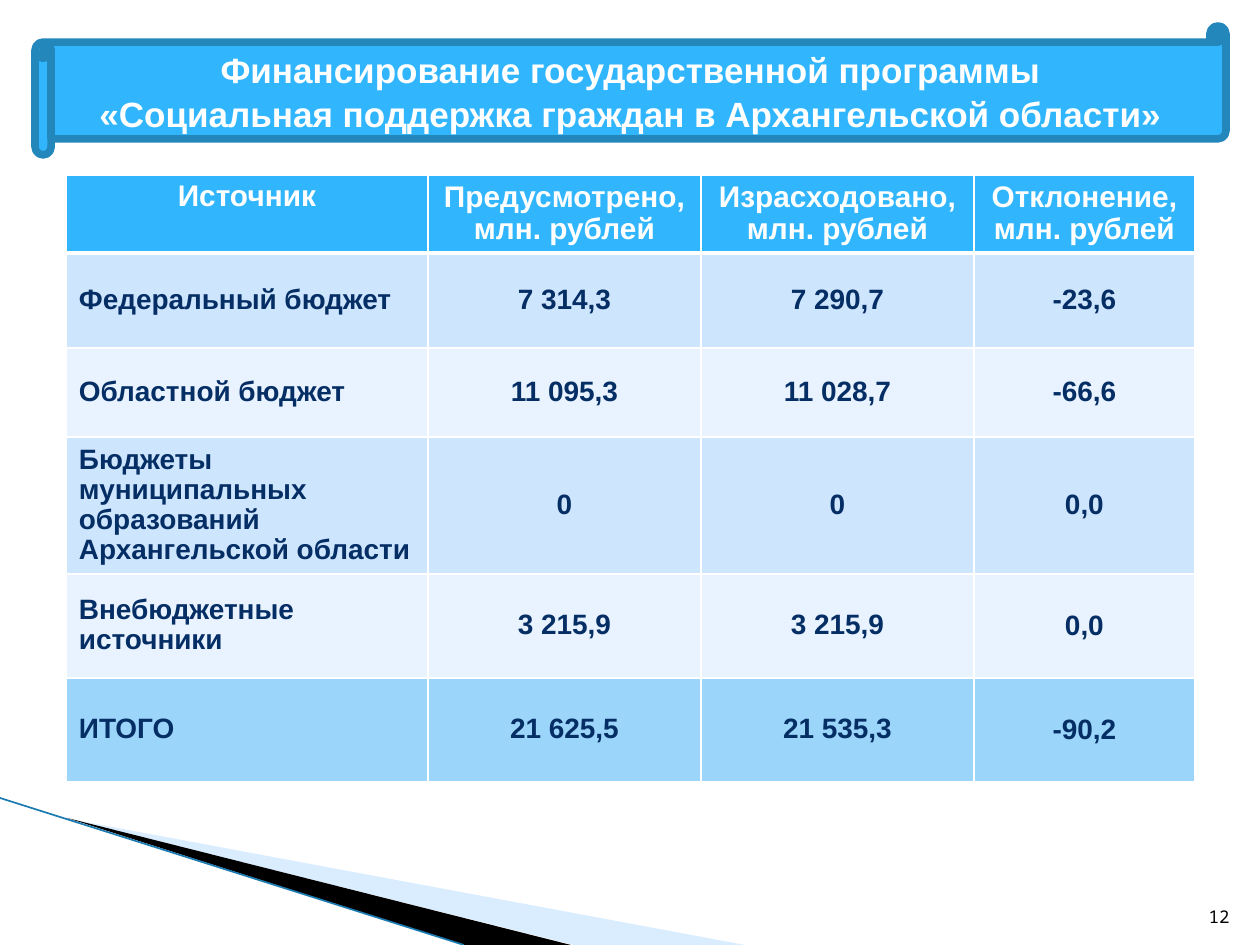
from lxml import etree
from pptx import Presentation
from pptx.dml.color import RGBColor
from pptx.enum.shapes import MSO_CONNECTOR, MSO_SHAPE
from pptx.enum.text import MSO_ANCHOR, MSO_AUTO_SIZE, PP_ALIGN
from pptx.oxml.ns import qn
from pptx.util import Emu, Pt

LEFT, MID, RIGHT = PP_ALIGN.LEFT, PP_ALIGN.CENTER, PP_ALIGN.RIGHT
TOP, CENTER, BOTTOM = MSO_ANCHOR.TOP, MSO_ANCHOR.MIDDLE, MSO_ANCHOR.BOTTOM
SCROLL, STRAIGHT = MSO_SHAPE.HORIZONTAL_SCROLL, MSO_CONNECTOR.STRAIGHT
FIXED = MSO_AUTO_SIZE.NONE

SCALE = 914400 / 126  # EMU in one px
COLORS = {
    "blue": "31B6FD", "edge": "2487BB", "white": "FFFFFF", "navy": "052E65",
    "odd": "CEE5FE", "even": "E8F3FF", "total": "9BD5FA",
    "pale": "A3D3FF", "black": "000000", "stripe": "1B7AB0",
}

# Text formats
TITLE = {"size": Pt(20), "name": "Arial", "bold": True}
HEAD = {"size": Pt(17), "name": "Arial", "bold": True}
BODY = {"size": Pt(16), "name": "Arial", "bold": True}
NUMBER = {"size": Pt(10), "name": "Noto Sans Mono", "bold": False}

# Cell margins in px: left, top, right, bottom
WIDE, SLIM, TIGHT = (13, 6, 13, 6), (9, 0, 9, 0), (1, 1, 1, 0)

HEADING = [
    "Финансирование государственной программы",
    "«Социальная поддержка граждан в Архангельской области»",
]
COLS = [362, 273, 273, 221]
ROWS = [78, 95, 89, 137, 104, 104]
DATA = [
    ["Источник", "Предусмотрено, млн. рублей",
     "Израсходовано, млн. рублей", "Отклонение, млн. рублей"],
    ["Федеральный бюджет", "7 314,3", "7 290,7", "-23,6"],
    ["Областной бюджет", "11 095,3", "11 028,7", "-66,6"],
    ["Бюджеты муниципальных образований Архангельской области",
     "0", "0", "0,0"],
    ["Внебюджетные источники", "3 215,9", "3 215,9", "0,0"],
    ["ИТОГО", "21 625,5", "21 535,3", "-90,2"],
]
FILLS = ["blue", "odd", "even", "odd", "even", "total"]


def px(n):
    return Emu(round(n * SCALE))


def rgb(key):
    return RGBColor.from_string(COLORS[key])


def paint(item, key):
    item.fill.solid()
    item.fill.fore_color.rgb = rgb(key)


def pad(item, sides):
    names = ("margin_left", "margin_top", "margin_right", "margin_bottom")
    for name, side in zip(names, sides):
        setattr(item, name, px(side))


def write(frame, lines, style, key, align):
    frame.word_wrap = True
    for i, line in enumerate(lines):
        par = frame.add_paragraph() if i else frame.paragraphs[0]
        par.alignment = align
        run = par.add_run()
        run.text = line
        for name, value in style.items():
            setattr(run.font, name, value)
        run.font.color.rgb = rgb(key)


def add_wedge(slide, points, key, alpha=None):
    pen = slide.shapes.build_freeform(*points[0], scale=SCALE)
    pen.add_line_segments(points[1:], close=True)
    wedge = pen.convert_to_shape()
    wedge.shadow.inherit = False
    paint(wedge, key)
    wedge.line.fill.background()
    if alpha:
        tint = wedge._element.spPr.find(".//" + qn("a:srgbClr"))
        etree.SubElement(tint, qn("a:alpha"), val=str(alpha * 1000))


def add_stripe(slide, x1, y1, x2, y2):
    line = slide.shapes.add_connector(STRAIGHT, px(x1), px(y1), px(x2), px(y2))
    line.line.color.rgb = rgb("stripe")
    line.line.width = Pt(0.95)
    etree.SubElement(line._element.spPr, qn("a:effectLst"))


def add_title(slide, x, y, w, h):
    box = [px(n) for n in (x, y, w, h)]
    scroll = slide.shapes.add_shape(SCROLL, *box)
    scroll.shadow.inherit = False
    paint(scroll, "blue")
    scroll.line.color.rgb = rgb("edge")
    scroll.line.width = Pt(4.33)

    # The title lies on top of the scroll
    title = slide.shapes.title
    title.left, title.top, title.width, title.height = box
    frame = title.text_frame
    frame.auto_size = FIXED
    frame.vertical_anchor = CENTER
    pad(frame, (0, 0, 0, 0))
    write(frame, HEADING, TITLE, "white", MID)
    for par in frame.paragraphs:
        par.line_spacing = 1.04
    slide.shapes._spTree.append(title._element)


def add_border(cell, side, width):
    props = cell._tc.get_or_add_tcPr()
    edge = etree.SubElement(props, qn("a:" + side), w=str(Pt(width)))
    fill = etree.SubElement(edge, qn("a:solidFill"))
    etree.SubElement(fill, qn("a:srgbClr"), val=COLORS["white"])


def fill_cell(cell, text, row, col):
    head, first = row == 0, col == 0
    for side in ("lnL", "lnR", "lnT", "lnB"):
        thick = (head and side == "lnB") or (row == 1 and side == "lnT")
        add_border(cell, side, 3 if thick else 1)
    paint(cell, FILLS[row])
    cell.vertical_anchor = TOP if head and first else CENTER
    pad(cell, WIDE if head or first else TIGHT if col == 3 else SLIM)
    align = LEFT if first and not head else MID
    write(cell.text_frame, [text], HEAD if head else BODY,
          "white" if head else "navy", align)
    cell.text_frame.paragraphs[0].line_spacing = 0.96


def add_grid(slide, x, y):
    table = slide.shapes.add_table(
        len(ROWS), len(COLS), px(x), px(y), px(sum(COLS)), px(sum(ROWS))).table
    for col, width in zip(table.columns, COLS):
        col.width = px(width)
    for row, height in zip(table.rows, ROWS):
        row.height = px(height)
    for r, texts in enumerate(DATA):
        for c, text in enumerate(texts):
            fill_cell(table.cell(r, c), text, r, c)


def add_number(slide, text, x, y, w, h):
    box = slide.shapes.add_textbox(px(x), px(y), px(w), px(h))
    box.text_frame.vertical_anchor = BOTTOM
    write(box.text_frame, [text], NUMBER, "black", RIGHT)


def main():
    deck = Presentation()
    deck.slide_width, deck.slide_height = px(1260), px(945)
    slide = deck.slides.add_slide(deck.slide_layouts[5])

    # Corner decoration
    add_wedge(slide, [(69, 819), (745, 945), (574, 945)], "pale", 40)
    add_wedge(slide, [(67, 818), (571, 945), (464, 945)], "black")
    add_stripe(slide, 0, 798, 464, 945)

    # Content
    add_title(slide, 35, 26, 1191, 129)
    add_grid(slide, 66, 175)
    add_number(slide, "12", 1192, 883, 50, 50)
    deck.save("out.pptx")


if __name__ == "__main__":
    main()
